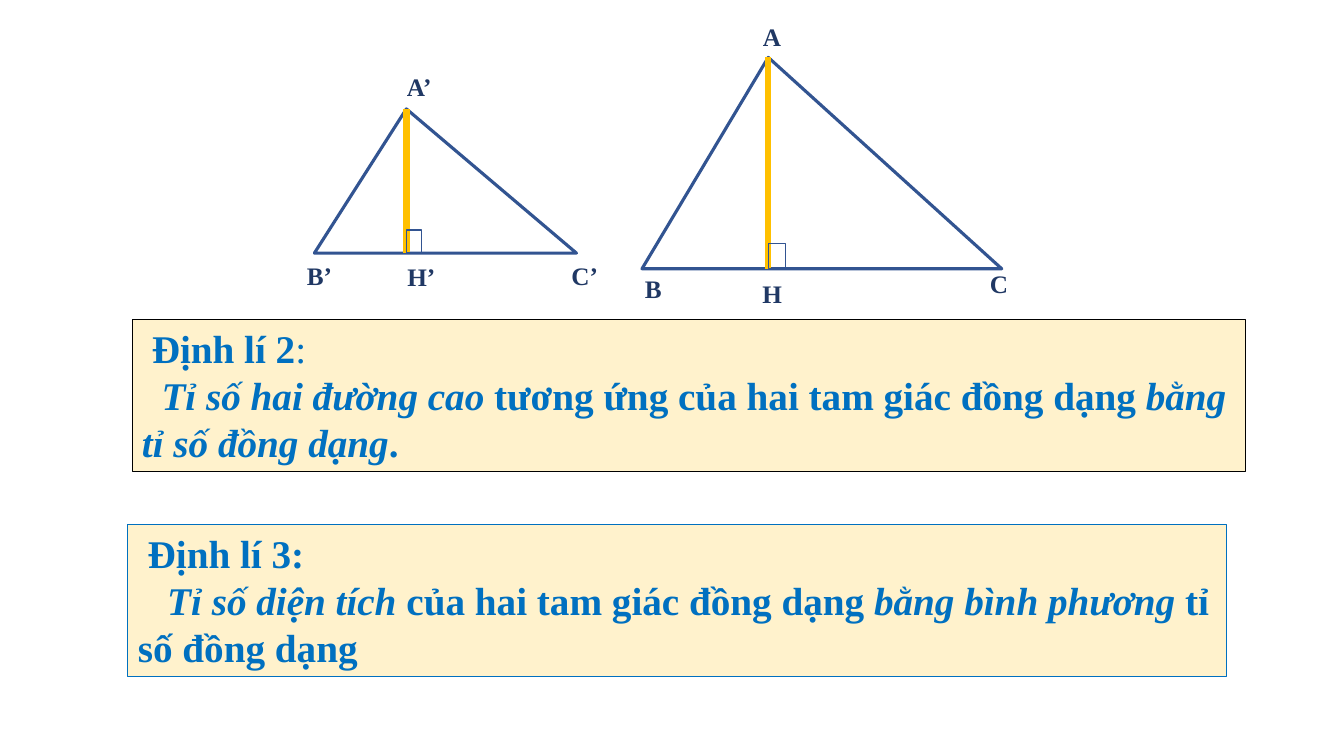
from lxml import etree
from pptx import Presentation
from pptx.dml.color import RGBColor
from pptx.enum import shapes, text
from pptx.oxml.ns import qn
from pptx.util import Pt

# Content: lengths in points
FONT = "Times New Roman"
NAVY, OUTLINE, GOLD = "203864", "325491", "FFC000"
BLUE, CREAM, BLACK = "0070C0", "FFF2CC", "000000"
APEX = 0.351  # foot of the altitude as a share of the base
SPACE = 7  # one indent step in the theorem text

# Runs are (wording, bold, italic); each paragraph starts with its indent steps
THEOREMS = [
    {"box": (94.3, 228.2, 795.6, 108.7), "border": BLACK, "paragraphs": [
        (1, [("Định lí 2", True, False), (":", False, False)]),
        (2, [("Tỉ số hai đường cao ", True, True),
             ("tương ứng của hai tam giác đồng dạng ", True, False),
             ("bằng tỉ số đồng dạng", True, True),
             (".", True, False)]),
    ]},
    {"box": (91.4, 374.4, 784.8, 108.7), "border": BLUE, "paragraphs": [
        (1, [("Định lí 3:", True, False)]),
        (3, [("Tỉ số diện tích ", True, True),
             ("của hai tam giác đồng dạng ", True, False),
             ("bằng bình phương ", True, True),
             ("tỉ số đồng dạng", True, False)]),
    ]},
]

# Labels are (letter, centre, top)
TRIANGLES = [
    {"box": (458.6, 41, 257, 151), "right_angle": (12.2, 18), "label_width": 33,
     "labels": [("A", 551.5, 11.5), ("B", 466.6, 191.5),
                ("C", 713.5, 187.9), ("H", 551.5, 195.1)]},
    {"box": (224.6, 77.8, 187.2, 103), "right_angle": (10.8, 16.5), "label_width": 40,
     "labels": [("A’", 299.5, 47.5), ("B’", 228.2, 182.2),
                ("C’", 417.6, 182.2), ("H’", 301, 182.9)]},
]


def color(value):
    return RGBColor.from_string(value)


def points(*values):
    return [Pt(value) for value in values]


def style_run(run, size, shade, bold=True, italic=False):
    font = run.font
    font.name, font.size, font.bold, font.italic = FONT, Pt(size), bold, italic
    font.color.rgb = color(shade)


def outline(line, shade, width):
    line.color.rgb = color(shade)
    line.width = Pt(width)


def add_outlined(slide, preset, box, width):
    shape = slide.shapes.add_shape(preset, *points(*box))
    shape.shadow.inherit = False
    shape.fill.background()
    outline(shape.line, OUTLINE, width)
    return shape


def add_theorem(slide, theorem):
    panel = slide.shapes.add_textbox(*points(*theorem["box"]))
    panel.fill.solid()
    panel.fill.fore_color.rgb = color(CREAM)
    outline(panel.line, theorem["border"], 0.75)
    frame = panel.text_frame
    frame.word_wrap = True
    for index, (steps, runs) in enumerate(theorem["paragraphs"]):
        paragraph = frame.add_paragraph() if index else frame.paragraphs[0]
        properties = paragraph._p.get_or_add_pPr()
        properties.set("marL", "0")
        properties.set("indent", str(Pt(steps * SPACE)))
        for wording, bold, italic in runs:
            run = paragraph.add_run()
            run.text = wording
            style_run(run, 28, BLUE, bold, italic)


def add_label(slide, letter, centre, top, width):
    label = slide.shapes.add_textbox(*points(centre - width / 2, top, width, 59))
    frame = label.text_frame
    frame.word_wrap = False
    frame.text = letter
    paragraph = frame.paragraphs[0]
    paragraph.alignment = text.PP_ALIGN.CENTER
    style_run(paragraph.runs[0], 18, NAVY)


def add_triangle(slide, triangle):
    left, top, width, height = triangle["box"]
    foot, base = left + APEX * width, top + height
    sides = add_outlined(slide, shapes.MSO_SHAPE.ISOSCELES_TRIANGLE, triangle["box"], 2.25)
    sides.adjustments[0] = APEX

    altitude = slide.shapes.add_connector(
        shapes.MSO_CONNECTOR.STRAIGHT, *points(foot, top, foot, base))
    outline(altitude.line, GOLD, 4.5)
    etree.SubElement(altitude._element.spPr, qn("a:effectLst"))

    mark_width, mark_height = triangle["right_angle"]
    add_outlined(slide, shapes.MSO_SHAPE.FLOWCHART_PROCESS,
                 (foot, base - mark_height, mark_width, mark_height), 1)
    for letter, centre, label_top in triangle["labels"]:
        add_label(slide, letter, centre, label_top, triangle["label_width"])


def main():
    deck = Presentation()
    deck.slide_width, deck.slide_height = points(960, 540)
    slide = deck.slides.add_slide(deck.slide_layouts[6])
    # Theorem panels
    for theorem in THEOREMS:
        add_theorem(slide, theorem)
    # Similar triangles with their altitudes
    for triangle in TRIANGLES:
        add_triangle(slide, triangle)
    deck.save("out.pptx")


if __name__ == "__main__":
    main()
